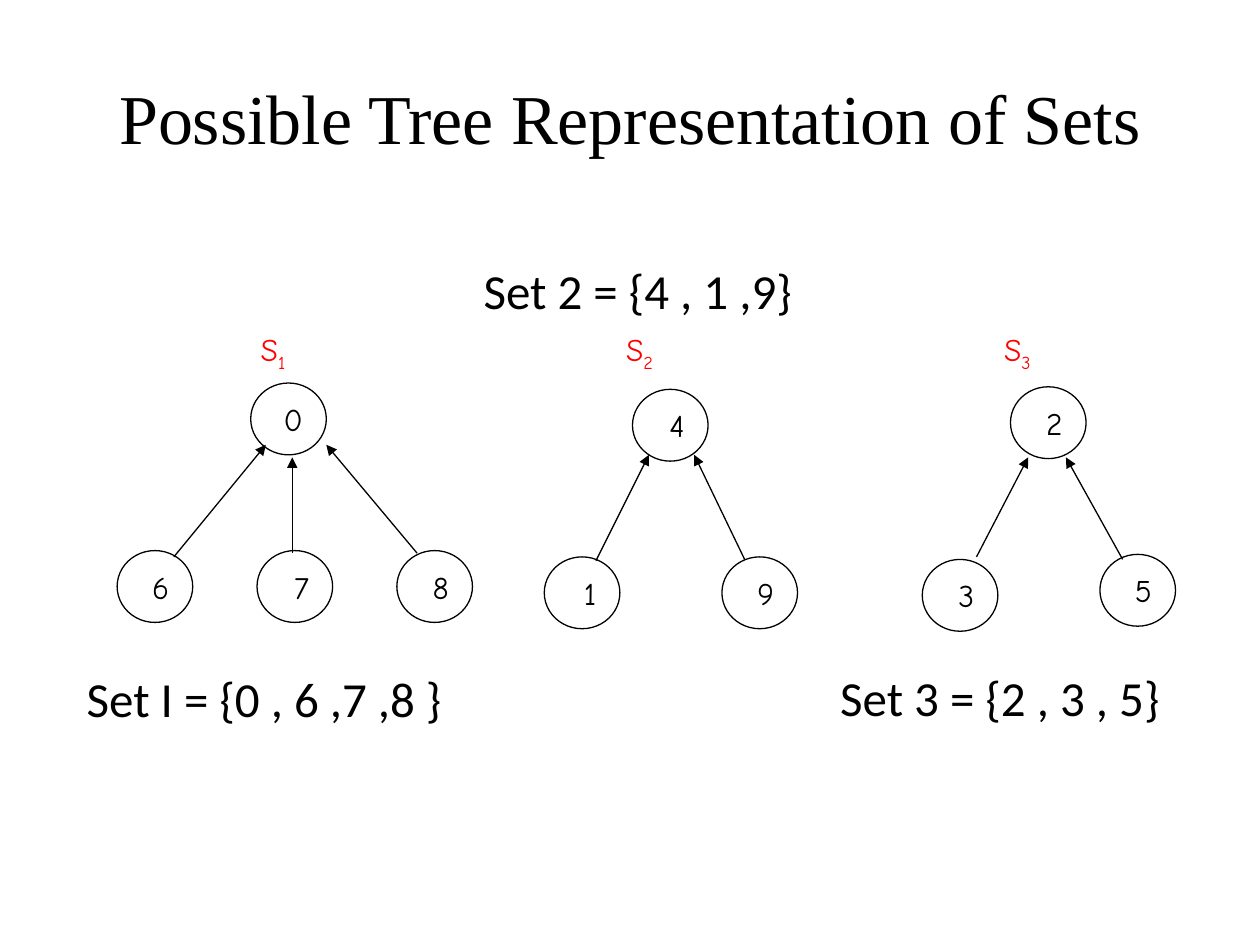
import dataclasses

import pptx
import pptx.dml.color
import pptx.enum.shapes
import pptx.enum.text
import pptx.oxml.ns
import pptx.util
from lxml import etree

Inches = pptx.util.Inches
Align = pptx.enum.text.PP_ALIGN
Anchor = pptx.enum.text.MSO_ANCHOR


@dataclasses.dataclass(frozen=True)
class Theme:
    ink: str = "000000"
    accent: str = "FF0000"
    title_font: str = "Times New Roman"
    node_font: str = "Comic Neue"
    set_font: str = "Calibri"
    title_size: int = 40
    node_size: int = 18
    set_size: int = 28
    line_width: float = 0.75


THEME = Theme()
NODE_WIDTH, NODE_HEIGHT = 0.6, 0.57

# Nodes: (value, left, top), root first. Edges: (parent end, child end).
TREES = [
    {
        "index": "1", "label_left": 1.97,
        "nodes": [("0", 1.99, 3.04), ("6", 0.93, 4.37), ("7", 2.04, 4.37), ("8", 3.15, 4.37)],
        "edges": [((2.11, 3.53), (1.38, 4.42)), ((2.32, 3.63), (2.32, 4.39)),
                  ((2.59, 3.53), (3.31, 4.39))],
        "set": ("Set I = {0 , 6 ,7 ,8 }", 0.59, 5.26, 3.43),
    },
    {
        "index": "2", "label_left": 4.87,
        "nodes": [("4", 5.02, 3.09), ("1", 4.32, 4.42), ("9", 5.73, 4.42)],
        "edges": [((5.15, 3.61), (4.73, 4.45)), ((5.51, 3.61), (5.91, 4.44))],
        "set": ("Set 2 = {4 , 1 ,9}", 3.74, 2.02, 3),
    },
    {
        "index": "3", "label_left": 7.87,
        "nodes": [("2", 8.02, 3.07), ("3", 7.32, 4.44), ("5", 8.73, 4.4)],
        "edges": [((8.16, 3.63), (7.75, 4.42)), ((8.46, 3.63), (8.91, 4.44))],
        "set": ("Set 3 = {2 , 3 , 5}", 6.57, 5.25, 3.11),
    },
]


def rgb(value):
    return pptx.dml.color.RGBColor.from_string(value)


def format_span(span, font, size, color=THEME.ink):
    span.font.name = font
    span.font.size = pptx.util.Pt(size)
    span.font.color.rgb = rgb(color)


def style_line(line):
    line.color.rgb = rgb(THEME.ink)
    line.width = pptx.util.Pt(THEME.line_width)


def add_text(page, text, left, top, width, height, font, size, wrap=False):
    box = page.shapes.add_textbox(Inches(left), Inches(top), Inches(width), Inches(height))
    frame = box.text_frame
    frame.text = text
    frame.word_wrap = wrap
    format_span(frame.paragraphs[0].runs[0], font, size)
    return frame


def add_title(page, text):
    frame = add_text(page, text, 0.5, 0.3, 9, 1.25, THEME.title_font, THEME.title_size, wrap=True)
    frame.vertical_anchor = Anchor.MIDDLE
    frame.paragraphs[0].alignment = Align.CENTER


def add_node(page, value, left, top):
    node = page.shapes.add_shape(
        pptx.enum.shapes.MSO_SHAPE.OVAL,
        Inches(left), Inches(top), Inches(NODE_WIDTH), Inches(NODE_HEIGHT))
    node.shadow.inherit = False
    node.fill.background()
    style_line(node.line)
    frame = node.text_frame
    frame.text = value
    frame.word_wrap = False
    frame.vertical_anchor = Anchor.MIDDLE
    para = frame.paragraphs[0]
    para.alignment = Align.RIGHT
    format_span(para.runs[0], THEME.node_font, THEME.node_size)


def add_edge(page, parent, child):
    """Draw a line whose arrowhead points at the parent."""
    edge = page.shapes.add_connector(
        pptx.enum.shapes.MSO_CONNECTOR.STRAIGHT,
        *(Inches(value) for value in (*parent, *child)))
    style_line(edge.line)
    qn = pptx.oxml.ns.qn
    etree.SubElement(edge.line._get_or_add_ln(), qn("a:headEnd"), type="triangle")
    etree.SubElement(edge._element.spPr, qn("a:effectLst"))


def add_tree_label(page, index, left):
    """Name a tree as a red S with a subscript number."""
    frame = add_text(page, "S", left, 2.57, 0.75, 0.4, THEME.node_font, THEME.node_size, wrap=True)
    frame.auto_size = pptx.enum.text.MSO_AUTO_SIZE.SHAPE_TO_FIT_TEXT
    para = frame.paragraphs[0]
    subscript = para.add_run()
    subscript.text = index
    for span in para.runs:
        format_span(span, THEME.node_font, THEME.node_size, THEME.accent)
    subscript.font._element.set("baseline", "-25000")


def add_set(page, text, left, top, width):
    frame = add_text(page, text, left, top, width, 0.57, THEME.set_font, THEME.set_size)
    frame.auto_size = pptx.enum.text.MSO_AUTO_SIZE.SHAPE_TO_FIT_TEXT


def add_tree(page, tree):
    for node in tree["nodes"]:
        add_node(page, *node)
    for edge in tree["edges"]:
        add_edge(page, *edge)
    add_tree_label(page, tree["index"], tree["label_left"])
    add_set(page, *tree["set"])


def main():
    deck = pptx.Presentation()
    deck.slide_width, deck.slide_height = Inches(10), Inches(7.5)
    page = deck.slides.add_slide(deck.slide_layouts[6])
    add_title(page, "Possible Tree Representation of Sets")
    for tree in TREES:
        add_tree(page, tree)
    deck.save("out.pptx")


if __name__ == "__main__":
    main()
